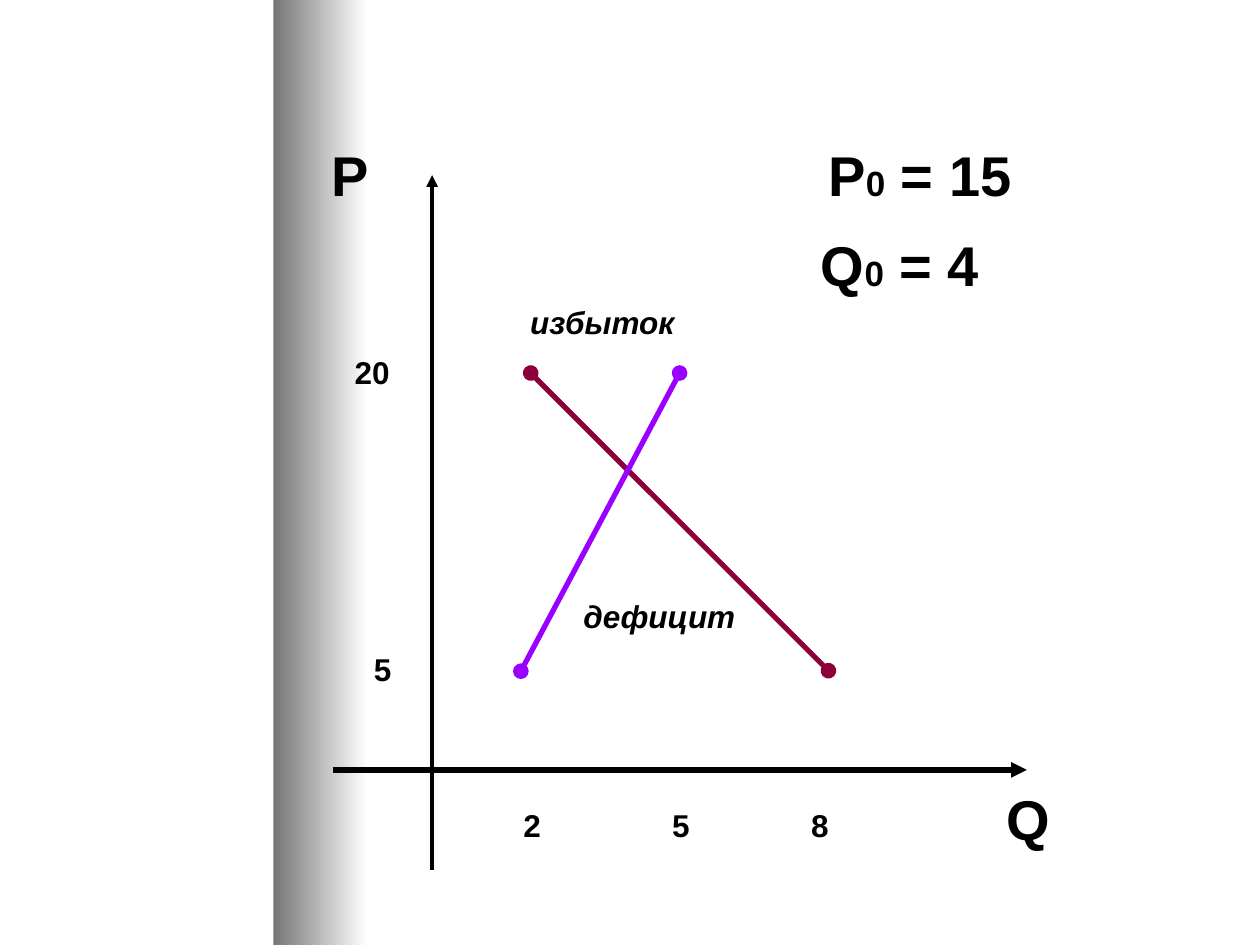
from dataclasses import dataclass

from lxml.etree import SubElement
from pptx import Presentation
from pptx.dml.color import RGBColor
from pptx.enum.shapes import MSO_CONNECTOR, MSO_SHAPE
from pptx.enum.text import MSO_AUTO_SIZE
from pptx.oxml.ns import qn
from pptx.util import Cm, Pt


@dataclass(frozen=True)
class Theme:
    """Colours, font and type sizes of the slide."""
    ink: str = "000000"
    demand: str = "8C0039"
    supply: str = "9900FF"
    band_dark: str = "767676"
    band_light: str = "FFFFFF"
    font: str = "Arial"
    large: int = 32
    subscript: int = 20
    small: int = 18


THEME = Theme()


def add_band(s, left, width, height):
    """Add the vertical band that fades to the right."""
    sp = s.shapes.add_shape(MSO_SHAPE.RECTANGLE, Cm(left), 0, Cm(width), height)
    sp.shadow.inherit = False
    sp.line.fill.background()
    sp.fill.gradient()
    sp.fill.gradient_angle = 0
    for stop, color in zip(sp.fill.gradient_stops, (THEME.band_dark, THEME.band_light)):
        stop.color.rgb = RGBColor.from_string(color)


def add_line(s, start, end, color, width, tail, head=None):
    """Add a straight line with the given end marks."""
    x1, y1, x2, y2 = (Cm(v) for v in (*start, *end))
    sp = s.shapes.add_connector(MSO_CONNECTOR.STRAIGHT, x1, y1, x2, y2)
    sp.line.color.rgb = RGBColor.from_string(color)
    sp.line.width = Pt(width)
    ln = sp.line._get_or_add_ln()
    if head:
        SubElement(ln, qn("a:headEnd"), type=head)
    SubElement(ln, qn("a:tailEnd"), type=tail)
    SubElement(sp._element.spPr, qn("a:effectLst"))


def add_label(s, left, top, width, *parts, size=THEME.small, italic=False):
    """Add a bold label, setting its second part as a subscript."""
    height = 1.6 if size == THEME.large else 1.02
    tf = s.shapes.add_textbox(Cm(left), Cm(top), Cm(width), Cm(height)).text_frame
    tf.word_wrap = True
    tf.auto_size = MSO_AUTO_SIZE.SHAPE_TO_FIT_TEXT
    p = tf.paragraphs[0]
    for i, part in enumerate(parts):
        r = p.add_run()
        r.text = part
        r.font.name = THEME.font
        r.font.size = Pt(THEME.subscript if i == 1 else size)
        r.font.bold = True
        r.font.italic = italic
        r.font.color.rgb = RGBColor.from_string(THEME.ink)


def main():
    """Build the supply and demand slide."""
    prs = Presentation()
    prs.slide_width, prs.slide_height = Cm(25.4), Cm(19.05)
    s = prs.slides.add_slide(prs.slide_layouts[6])
    add_band(s, 5.51, 1.9, prs.slide_height)

    add_line(s, (6.71, 15.52), (20.7, 15.52), THEME.ink, 3, "triangle")
    add_line(s, (8.71, 17.53), (8.71, 3.53), THEME.ink, 2.25, "triangle")
    add_label(s, 6.43, 2.7, 1.4, "Р", size=THEME.large)
    add_label(s, 20.04, 15.7, 1.5, "Q", size=THEME.large)

    add_label(s, 6.9, 6.99, 1.96, "20")
    add_label(s, 7.29, 12.98, 1.02, "5")
    for left, text in ((10.3, "2"), (13.3, "5"), (16.1, "8")):
        add_label(s, left, 16.13, 1.22, text)

    add_line(s, (10.7, 7.52), (16.7, 13.52), THEME.demand, 3, "oval", "oval")
    add_line(s, (10.5, 13.53), (13.7, 7.52), THEME.supply, 3, "oval", "oval")
    add_label(s, 10.44, 5.98, 3.7, "избыток", italic=True)
    add_label(s, 11.51, 11.92, 3.9, "дефицит", italic=True)

    add_label(s, 16.45, 2.7, 4.6, "Р", "0", " = 15", size=THEME.large)
    add_label(s, 16.3, 4.52, 4.1, "Q", "0", " = 4", size=THEME.large)
    prs.save("out.pptx")


if __name__ == "__main__":
    main()
